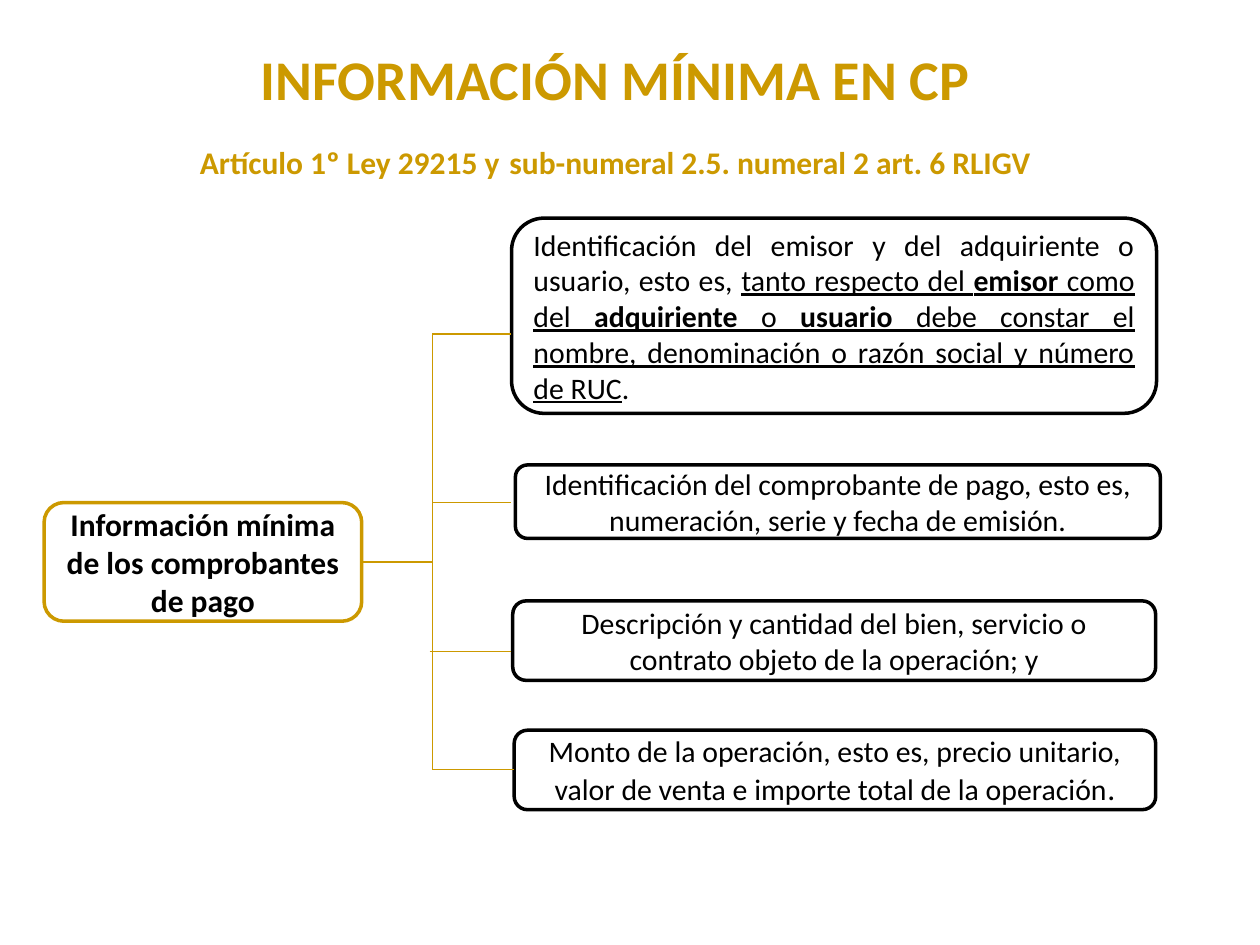
from lxml import etree
from pptx import Presentation
from pptx.dml.color import RGBColor
from pptx.enum.shapes import MSO_CONNECTOR, MSO_SHAPE
from pptx.enum.text import MSO_ANCHOR, PP_ALIGN
from pptx.oxml.ns import qn
from pptx.util import Pt

ROUNDED = MSO_SHAPE.ROUNDED_RECTANGLE
STRAIGHT = MSO_CONNECTOR.STRAIGHT
MIDDLE = MSO_ANCHOR.MIDDLE
CENTER, JUSTIFY = PP_ALIGN.CENTER, PP_ALIGN.JUSTIFY
GOLD, BLACK, WHITE = "CC9900", "000000", "FFFFFF"


def color(value):
    return RGBColor.from_string(value)


class Diagram:
    """Holds the style and the current slide; lengths are in points."""

    font_name = "Calibri"
    box_line = 2
    connector_line = 0.75

    def __init__(self, slide):
        self.slide = slide

    def add_text(self, paragraph, runs, size, ink, bold=None, align=CENTER):
        """Each run is (text, font settings that differ)."""
        for text, settings in runs:
            run = paragraph.add_run()
            run.text = text
            run.font.size = settings.get("size")
            run.font.bold = settings.get("bold")
            run.font.underline = settings.get("underline")
        paragraph.alignment = align
        font = paragraph.font
        font.name, font.size, font.bold = self.font_name, Pt(size), bold
        font.color.rgb = color(ink)

    def heading(self, left, top, width, height, title, subtitle_runs):
        box = self.slide.shapes.add_textbox(Pt(left), Pt(top), Pt(width), Pt(height))
        frame = box.text_frame
        frame.word_wrap = True
        self.add_text(frame.paragraphs[0], [(title, {})], 32, GOLD, bold=True)
        subtitle = frame.add_paragraph()
        subtitle.space_before = Pt(12)
        self.add_text(subtitle, subtitle_runs, 18, GOLD, bold=True)

    def box(self, left, top, width, height, runs, size=17, outline=BLACK,
            bold=None, align=CENTER):
        shape = self.slide.shapes.add_shape(
            ROUNDED, Pt(left), Pt(top), Pt(width), Pt(height))
        shape.shadow.inherit = False
        shape.fill.solid()
        shape.fill.fore_color.rgb = color(WHITE)
        shape.line.color.rgb = color(outline)
        shape.line.width = Pt(self.box_line)
        frame = shape.text_frame
        frame.word_wrap = True
        frame.vertical_anchor = MIDDLE
        self.add_text(frame.paragraphs[0], runs, size, BLACK, bold, align)

    def connector(self, x1, y1, x2, y2):
        line = self.slide.shapes.add_connector(
            STRAIGHT, Pt(x1), Pt(y1), Pt(x2), Pt(y2))
        line.line.color.rgb = color(GOLD)
        line.line.width = Pt(self.connector_line)
        etree.SubElement(line._element.spPr, qn("a:effectLst"))


def main():
    presentation = Presentation()
    presentation.slide_width, presentation.slide_height = Pt(720), Pt(540)
    diagram = Diagram(presentation.slides.add_slide(presentation.slide_layouts[6]))

    # Heading
    diagram.heading(48.2, 21.6, 607, 90, "INFORMACIÓN MÍNIMA EN CP", [
        ("Artículo 1º Ley 29215 y", {}),
        (" ", {"size": Pt(24)}),
        ("sub-numeral 2.5. numeral 2 art. 6 RLIGV", {}),
    ])

    # Root of the tree
    diagram.box(25.2, 287.2, 181.5, 67.8,
                [("Información mínima de los comprobantes de pago", {})],
                size=18, outline=GOLD, bold=True)

    # Requirements
    underlined = {"underline": True}
    strong = {"underline": True, "bold": True}
    diagram.box(292.3, 124.6, 368.6, 111.6, [
        ("Identificación del emisor y del adquiriente o usuario, esto es, ", {}),
        ("tanto respecto del ", underlined),
        ("emisor", strong),
        (" como del ", underlined),
        ("adquiriente", strong),
        (" o ", underlined),
        ("usuario", strong),
        (" debe constar el nombre, denominación o razón social y número de RUC",
         underlined),
        (".", {}),
    ], align=JUSTIFY)
    diagram.box(294.5, 265.7, 368.6, 42, [
        ("Identificación del comprobante de pago, esto es, numeración, serie "
         "y fecha de emisión.", {})])
    diagram.box(293, 343.4, 367.4, 45.4, [
        ("Descripción y cantidad del bien, servicio o contrato objeto de la "
         "operación; y", {})])
    diagram.box(293.8, 417.3, 366.6, 45.4, [
        ("Monto de la operación, esto es, precio unitario, valor de venta e "
         "importe total de la operación", {}),
        (".", {"size": Pt(18)})])

    # Stem, trunk and branches
    trunk, branch_end = 247, 292.3
    first, last = 190.8, 439.9
    diagram.connector(206.7, 321.1, trunk, 321.1)
    diagram.connector(trunk, first, trunk, last)
    for start, end, y in [(trunk, branch_end, first), (trunk, branch_end, 287.2),
                          (245.5, branch_end, 372.2), (trunk, 293.8, last)]:
        diagram.connector(start, y, end, y)

    presentation.save("out.pptx")


if __name__ == "__main__":
    main()
